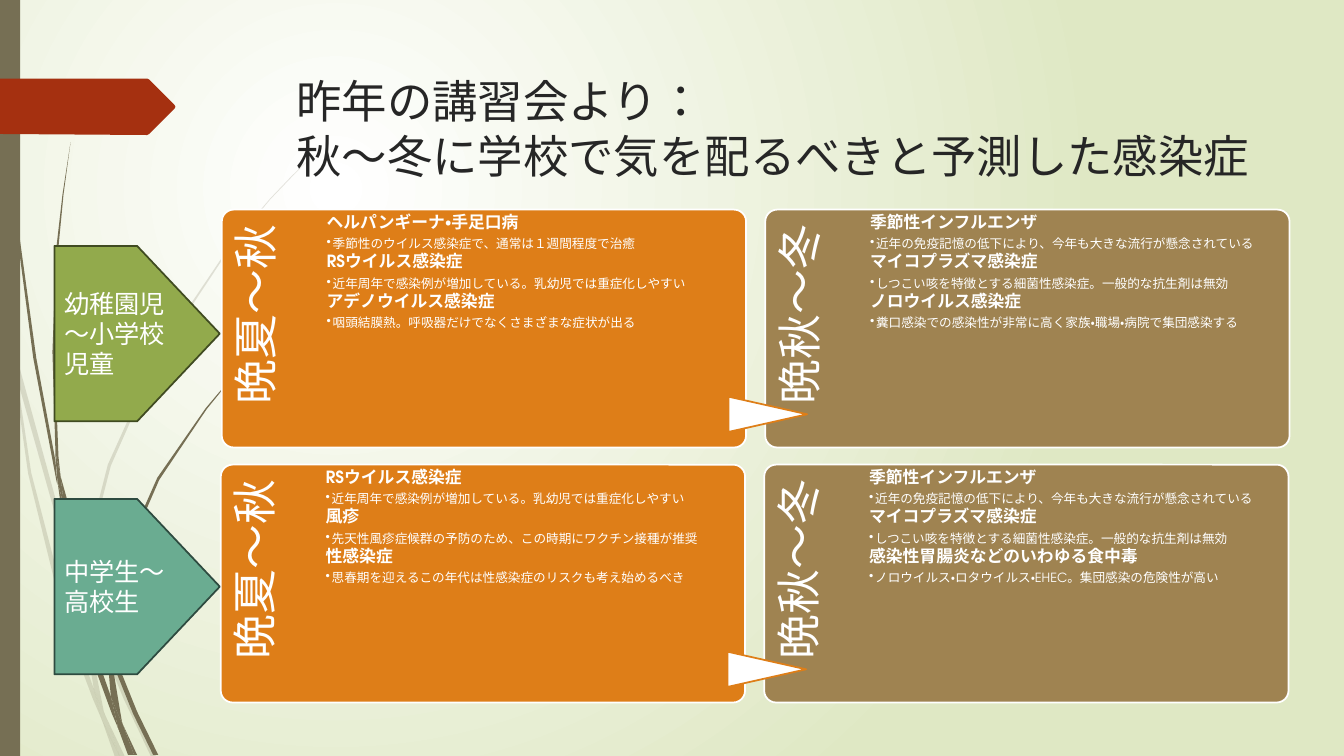
from dataclasses import dataclass

from lxml.etree import SubElement
from pptx import Presentation
from pptx.dml.color import RGBColor
from pptx.enum.lang import MSO_LANGUAGE_ID as Lang
from pptx.enum.shapes import MSO_SHAPE as Preset
from pptx.enum.text import MSO_ANCHOR as Anchor, PP_ALIGN as Align
from pptx.oxml.ns import qn
from pptx.util import Inches, Pt


@dataclass(frozen=True)
class Theme:
    font: str = "TeX Gyre Adventor"
    white: str = "FFFFFF"
    backdrop: str = "DFE8C4"
    title: str = "262626"
    wisp: str = "766F54"
    tab: str = "A53010"
    autumn: str = "DE7E18"
    winter: str = "9F8351"
    title_size: float = 32.4
    season_size: float = 32
    group_size: float = 18
    disease_size: float = 12
    note_size: float = 9
    outline: float = 1.25


THEME = Theme()

# Grass blades: outline points in inches
PALE_WISPS = [
    [(.11, 3.5), (.09, 3.22), (0, 2.82), (0, 2.99), (.1, 3.44)],
    [(.58, 5.22), (.84, 5.99), (.85, 5.86), (.62, 5.2), (.14, 3.45), (.17, 3.76)],
    [(.92, 6.07), (.88, 5.96), (.88, 6.1), (1.23, 6.94), (1.5, 7.51), (1.55, 7.51),
     (1.27, 6.92)],
    [(1.19, 7.51), (1.24, 7.51), (1.05, 7.11)],
    [(.93, 6.83), (.7, 6.19), (.31, 4.69), (.17, 3.76), (.11, 3.5), (.28, 4.7),
     (.65, 6.21), (.92, 6.93), (1.01, 7.14), (.99, 7.07)],
    [(.84, 5.99), (.87, 6.46), (.93, 6.83), (.96, 6.92), (1.05, 7.11), (1.03, 7.06),
     (.91, 6.46), (.88, 6.1)],
    [(.88, 5.84), (.95, 5.2), (1.1, 4.62), (1.6, 3.49), (2.29, 2.45), (2.68, 1.98),
     (2.9, 1.75), (3.12, 1.53), (2.89, 1.75), (2.68, 1.97), (2.28, 2.44), (1.58, 3.48),
     (1.07, 4.61), (.92, 5.2), (.85, 5.84), (.85, 5.86), (.88, 5.96)],
    [(1.01, 7.14), (1.14, 7.51), (1.19, 7.51)],
    [(.88, 6.08), (.88, 5.96), (.85, 5.86), (.84, 5.99)],
    [(.96, 6.92), (.93, 6.83), (.99, 7.07), (1.01, 7.14), (1.19, 7.51), (1.05, 7.11)],
]
DARK_WISPS = [
    [(.07, 1.1), (.17, 2.33), (.33, 3.55), (.56, 4.77), (.57, 4.81), (.55, 4.57),
     (.36, 3.55), (.19, 2.32), (.08, 1.09), (.05, .48), (.04, 0), (.03, 0), (.04, .48)],
    [(.88, 5.92), (1.06, 6.45), (1.06, 6.31), (.93, 5.9), (.6, 4.72), (.64, 5.05)],
    [(1.13, 6.49), (1.1, 6.41), (1.11, 6.56), (1.32, 7.08), (1.52, 7.49), (1.57, 7.49),
     (1.36, 7.06)],
    [(1.1, 6.91), (.98, 6.57), (.72, 5.56), (.64, 5.05), (.57, 4.77), (.68, 5.57),
     (.93, 6.59), (1.11, 7.08), (1.17, 7.22), (1.16, 7.17)],
    [(.6, 4.72), (.58, 4.53), (.54, 3.49), (.58, 2.45), (.63, 1.93), (.7, 1.41),
     (.62, 1.93), (.56, 2.45), (.52, 3.49), (.55, 4.49)],
    [(1.33, 7.49), (1.36, 7.49), (1.22, 7.19)],
    [(.57, 4.77), (.64, 5.05), (.6, 4.72), (.55, 4.49), (.55, 4.53)],
    [(1.11, 6.33), (1.14, 5.92), (1.25, 5.52), (1.58, 4.76), (2.05, 4.06), (2.31, 3.74),
     (2.61, 3.44), (2.6, 3.44), (2.31, 3.73), (2.04, 4.05), (1.56, 4.74), (1.22, 5.51),
     (1.11, 5.9), (1.06, 6.31), (1.1, 6.41)],
    [(1.17, 7.22), (1.27, 7.49), (1.31, 7.49)],
    [(1.06, 6.45), (1.1, 6.91), (1.16, 7.06), (1.22, 7.19), (1.21, 7.16), (1.11, 6.56),
     (1.09, 6.51)],
    [(1.06, 6.45), (1.11, 6.56), (1.1, 6.41), (1.06, 6.31)],
    [(1.16, 7.06), (1.1, 6.91), (1.16, 7.17), (1.17, 7.22), (1.3, 7.49), (1.33, 7.49),
     (1.22, 7.19)],
]
TAB = [(1.73, 1.08), (1.48, 1.33), (1.46, 1.34), (0, 1.33), (0, .78), (1.46, .78),
       (1.48, .79), (1.73, 1.04), (1.74, 1.06)]

FLU = ("季節性インフルエンザ", "近年の免疫記憶の低下により、今年も大きな流行が懸念されている")
MYCOPLASMA = ("マイコプラズマ感染症", "しつこい咳を特徴とする細菌性感染症。一般的な抗生剤は無効")
RS_VIRUS = ("RSウイルス感染症", "近年周年で感染例が増加している。乳幼児では重症化しやすい")
# Each row: box (left, top), group, arrow fill, arrow line, autumn list, winter list
ROWS = [
    ((2.2, 2.08), (2.44, "幼稚園児～小学校児童", "92AA4C", "404B21"),
     [("ヘルパンギーナ・手足口病", "季節性のウイルス感染症で、通常は１週間程度で治癒"), RS_VIRUS,
      ("アデノウイルス感染症", "咽頭結膜熱。呼吸器だけでなくさまざまな症状が出る")],
     [FLU, MYCOPLASMA,
      ("ノロウイルス感染症", "糞口感染での感染性が非常に高く家族・職場・病院で集団感染する")]),
    ((2.19, 4.61), (4.95, "中学生～高校生", "6AAC91", "2E4B40"),
     [RS_VIRUS, ("風疹", "先天性風疹症候群の予防のため、この時期にワクチン接種が推奨"),
      ("性感染症", "思春期を迎えるこの年代は性感染症のリスクも考え始めるべき")],
     [FLU, MYCOPLASMA,
      ("感染性胃腸炎などのいわゆる食中毒",
       "ノロウイルス・ロタウイルス・EHEC。集団感染の危険性が高い")]),
]


def paint(shape, fill, line=None):
    shape.shadow.inherit = False
    shape.fill.solid()
    shape.fill.fore_color.rgb = RGBColor.from_string(fill)
    if line:
        shape.line.color.rgb = RGBColor.from_string(line)
        shape.line.width = Pt(THEME.outline)
    else:
        shape.line.fill.background()


def add_preset(page, preset, box, fill, line=None):
    shape = page.shapes.add_shape(preset, *map(Inches, box))
    paint(shape, fill, line)
    return shape


def add_outline(page, points, fill, alpha=None):
    corners = [(Inches(x), Inches(y)) for x, y in points]
    builder = page.shapes.build_freeform(*corners[0])
    builder.add_line_segments(corners[1:], close=True)
    shape = builder.convert_to_shape()
    paint(shape, fill)
    if alpha:
        color = shape.fill._xPr.find(".//" + qn("a:srgbClr"))
        SubElement(color, qn("a:alpha"), val=str(alpha * 1000))


def add_text_frame(page, box, margins=(.1, .05, .1, .05), rotation=0):
    shape = page.shapes.add_textbox(*map(Inches, box))
    shape.rotation = rotation
    frame = shape.text_frame
    frame.word_wrap = True
    for side, margin in zip(("left", "top", "right", "bottom"), margins):
        setattr(frame, "margin_" + side, Inches(margin))
    return frame


def write(para, text, size, color=THEME.white, bold=False):
    span = para.add_run()
    span.text = text
    formats = {"name": THEME.font, "size": Pt(size), "bold": bold,
               "language_id": Lang.JAPANESE}
    for name, value in formats.items():
        setattr(span.font, name, value)
    span.font.color.rgb = RGBColor.from_string(color)


def space_lines(para, after, bullet=False):
    """Tight lines, a gap after in percent, and an optional bullet."""
    para.line_spacing = .9
    props = para._p.get_or_add_pPr()
    gap = SubElement(props, qn("a:spcAft"))
    SubElement(gap, qn("a:spcPct"), val=str(after * 1000))
    if bullet:
        para.level = 1
        props.set("marL", str(Inches(.06)))
        props.set("indent", str(-Inches(.06)))
        SubElement(props, qn("a:buChar"), char="•")


def draw_backdrop(page):
    fill = page.background.fill
    fill.gradient()
    for stop, color in zip(fill.gradient_stops, (THEME.white, THEME.backdrop)):
        stop.color.rgb = RGBColor.from_string(color)
    linear = page.element.find(".//" + qn("a:lin"))
    gradient = linear.getparent()
    gradient.remove(linear)
    circle = SubElement(gradient, qn("a:path"), path="circle")
    SubElement(circle, qn("a:fillToRect"), l="50000", t="50000", r="100000", b="100000")
    for points in PALE_WISPS:
        add_outline(page, points, THEME.wisp, alpha=20)
    for points in DARK_WISPS:
        add_outline(page, points, THEME.wisp)
    add_preset(page, Preset.RECTANGLE, (0, 0, .2, 7.5), THEME.wisp)
    add_outline(page, TAB, THEME.tab)


def draw_title(page, box, lines):
    para = add_text_frame(page, box).paragraphs[0]
    for index, line in enumerate(lines):
        if index:
            para.add_line_break()
        write(para, line, THEME.title_size, THEME.title)


def draw_season(page, left, top, season, fill, diseases):
    card = add_preset(page, Preset.ROUNDED_RECTANGLE, (left, top, 5.2, 2.36), fill, THEME.white)
    card.adjustments[0] = .05
    # Season name, reading upwards
    label = add_text_frame(page, (left - .45, top + .45, 1.94, 1.04), (0, .12, .15, 0), 270)
    para = label.paragraphs[0]
    para.alignment = Align.RIGHT
    space_lines(para, 35)
    write(para, season, THEME.season_size)
    # Diseases with a note under each
    frame = add_text_frame(page, (left + 1.04, top, 3.88, 2.36), (0, .04, 0, 0))
    for index, (disease, note) in enumerate(diseases):
        para = frame.add_paragraph() if index else frame.paragraphs[0]
        space_lines(para, 35)
        write(para, disease, THEME.disease_size, bold=True)
        para = frame.add_paragraph()
        space_lines(para, 15, bullet=True)
        write(para, note, THEME.note_size)


def draw_row(page, left, top, autumn, winter):
    draw_season(page, left, top, "晩夏～秋", THEME.autumn, autumn)
    draw_season(page, left + 5.39, top, "晩秋～冬", THEME.winter, winter)
    pointer = add_preset(page, Preset.FLOWCHART_EXTRACT, (left + 5.24, top + 1.64, .35, .78),
                         THEME.white, THEME.autumn)
    pointer.rotation = 90


def draw_group(page, top, name, fill, line):
    arrow = add_preset(page, Preset.PENTAGON, (.54, top, 1.64, 1.74), fill, line)
    frame = arrow.text_frame
    frame.word_wrap = True
    frame.vertical_anchor = Anchor.MIDDLE
    para = frame.paragraphs[0]
    para.alignment = Align.LEFT
    write(para, name, THEME.group_size)


def main():
    deck = Presentation()
    deck.slide_width, deck.slide_height = Inches(13.33), Inches(7.5)
    page = deck.slides.add_slide(deck.slide_layouts[6])
    draw_backdrop(page)
    draw_title(page, (2.84, .68, 9.75, 1.4),
               ["昨年の講習会より：", "秋～冬に学校で気を配るべきと予測した感染症"])
    for corner, group, autumn, winter in ROWS:
        draw_row(page, *corner, autumn, winter)
        draw_group(page, *group)
    deck.save("out.pptx")


if __name__ == "__main__":
    main()
